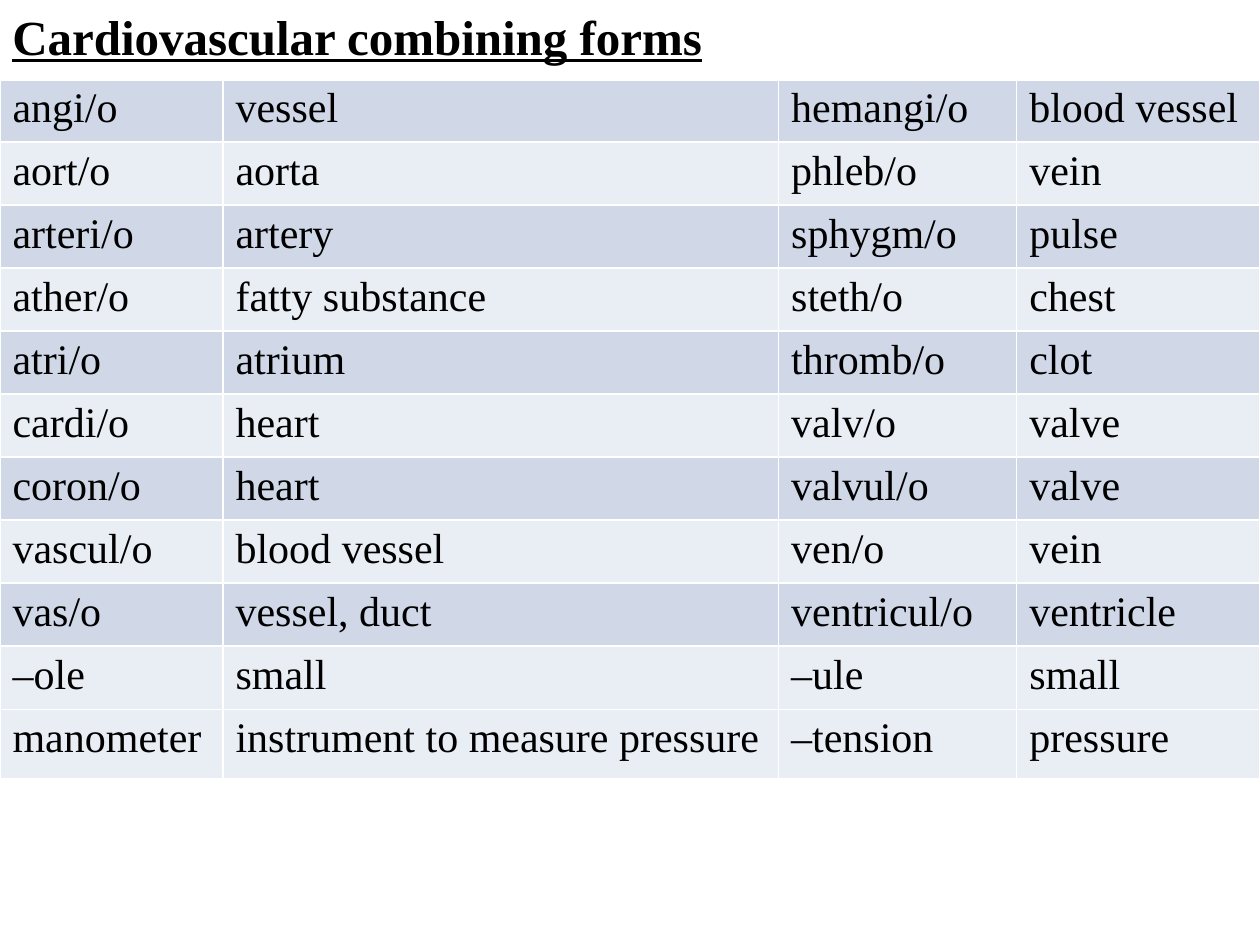
from lxml import etree
from pptx import Presentation
from pptx.dml.color import RGBColor
from pptx.enum.text import MSO_AUTO_SIZE
from pptx.oxml.ns import qn
from pptx.util import Pt

GROW = MSO_AUTO_SIZE.SHAPE_TO_FIT_TEXT
FONT = "Times New Roman"
COLORS = {"text": "000000", "edge": "FFFFFF", "dark": "D0D8E8", "light": "E9EDF4"}
WIDTHS = [127.44, 317.52, 136.08, 138.96]
HEIGHTS = [36] * 10 + [39.6]
FILLS = ["dark", "light"] * 5 + ["light"]
TERMS = [
    ["angi/o", "vessel", "hemangi/o", "blood vessel"],
    ["aort/o", "aorta", "phleb/o", "vein"],
    ["arteri/o", "artery", "sphygm/o", "pulse"],
    ["ather/o", "fatty substance", "steth/o", "chest"],
    ["atri/o", "atrium", "thromb/o", "clot"],
    ["cardi/o", "heart", "valv/o", "valve"],
    ["coron/o", "heart", "valvul/o", "valve"],
    ["vascul/o", "blood vessel", "ven/o", "vein"],
    ["vas/o", "vessel, duct", "ventricul/o", "ventricle"],
    ["–ole", "small", "–ule", "small"],
    ["manometer", "instrument to measure pressure", "–tension", "pressure"],
]


def write(frame, text, size=24, bold=None, underline=None, color="text"):
    run = frame.paragraphs[0].add_run()
    run.text = text
    font = run.font
    font.name, font.size = FONT, Pt(size)
    font.bold, font.underline = bold, underline
    font.color.rgb = RGBColor.from_string(COLORS[color])


class Deck:
    """Hold the slide and its style, and add each kind of element."""

    def __init__(self, wide, high):
        self.show = Presentation()
        self.show.slide_width, self.show.slide_height = Pt(wide), Pt(high)
        self.slide = self.show.slides.add_slide(self.show.slide_layouts[6])

    def title(self, text, left, top, wide, high):
        box = self.slide.shapes.add_textbox(Pt(left), Pt(top), Pt(wide), Pt(high))
        box.text_frame.word_wrap = True
        box.text_frame.auto_size = GROW
        write(box.text_frame, text, size=28, bold=True, underline=True)

    def edge(self, cell, top):
        props = cell._tc.get_or_add_tcPr()
        sides = {"lnL": 1, "lnR": 1, "lnT": top, "lnB": 1}
        for place, (side, width) in enumerate(sides.items()):
            line = etree.Element(qn(f"a:{side}"), w=str(Pt(width)))
            fill = etree.SubElement(line, qn("a:solidFill"))
            etree.SubElement(fill, qn("a:srgbClr"), val=COLORS["edge"])
            props.insert(place, line)

    def table(self, rows, left, top):
        frame = self.slide.shapes.add_table(
            len(rows), len(WIDTHS), Pt(left), Pt(top), Pt(sum(WIDTHS)), Pt(sum(HEIGHTS)))
        table = frame.table
        table.first_row = False
        for column, width in zip(table.columns, WIDTHS):
            column.width = Pt(width)
        for i, (row, height) in enumerate(zip(table.rows, HEIGHTS)):
            row.height = Pt(height)
            for cell, text in zip(row.cells, rows[i]):
                cell.fill.solid()
                cell.fill.fore_color.rgb = RGBColor.from_string(COLORS[FILLS[i]])
                self.edge(cell, 1 if i else 3)
                write(cell.text_frame, text)


def main():
    deck = Deck(720, 540)
    deck.title("Cardiovascular combining forms", 0, 0, 720, 41.2)
    deck.table(TERMS, 0, 45)
    deck.show.save("out.pptx")


if __name__ == "__main__":
    main()
